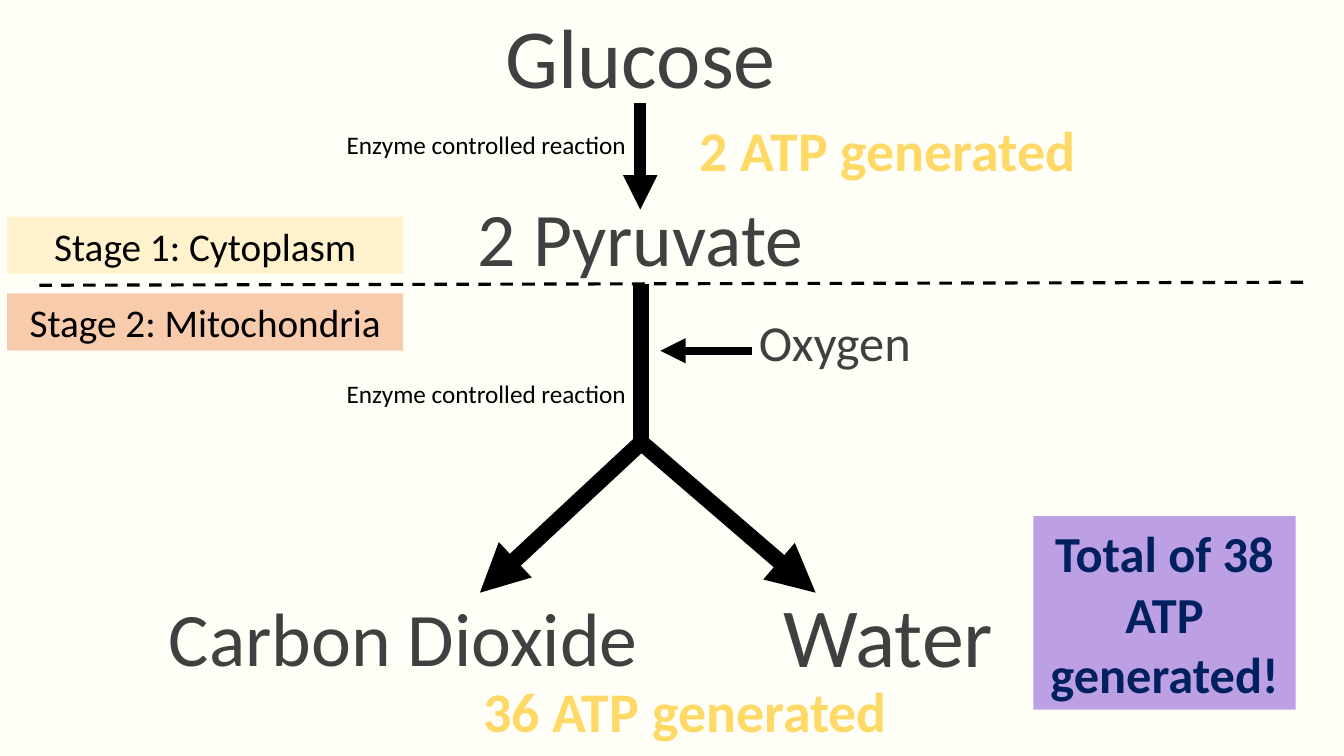
from lxml import etree
from pptx import Presentation
from pptx.dml.color import RGBColor
from pptx.enum.dml import MSO_LINE
from pptx.enum.shapes import MSO_CONNECTOR, MSO_SHAPE
from pptx.enum.text import MSO_ANCHOR, MSO_AUTO_SIZE, PP_ALIGN
from pptx.oxml import parse_xml
from pptx.oxml.ns import nsdecls, qn
from pptx.util import Inches, Pt

STRAIGHT = MSO_CONNECTOR.STRAIGHT
RECT = MSO_SHAPE.RECTANGLE
DASH = MSO_LINE.DASH
MIDDLE = MSO_ANCHOR.MIDDLE
FIT = MSO_AUTO_SIZE.SHAPE_TO_FIT_TEXT
LEFT, CENTER = PP_ALIGN.LEFT, PP_ALIGN.CENTER

FONT = "Calibri"
COLORS = {
    "background": "FFFFF8",
    "molecule": "404040",
    "black": "000000",
    "cytoplasm": "FFF2CC",
    "mitochondria": "F8CBAD",
    "total": "BDA0E4",
    "navy": "002060",
    "gold": "FFC000",
    "yellow": "FFD966",
    "cream": "FFF2CC",
}


def rgb(name):
    return RGBColor.from_string(COLORS[name])


def write(sp, text, size, color, align=CENTER, bold=False, wrap=True):
    tf = sp.text_frame
    tf.word_wrap = wrap
    tf.auto_size = FIT
    p = tf.paragraphs[0]
    p.text = text
    p.alignment = align
    r = p.runs[0]
    r.font.name = FONT
    r.font.size = Pt(size)
    r.font.bold = bold
    r.font.color.rgb = rgb(color)
    return r


def add_label(slide, box, text, size, color, **style):
    sp = slide.shapes.add_textbox(*map(Inches, box))
    return write(sp, text, size, color, **style)


def add_panel(slide, box, text, size, fill, color, bold=False):
    sp = slide.shapes.add_shape(RECT, *map(Inches, box))
    sp.shadow.inherit = False
    sp.fill.solid()
    sp.fill.fore_color.rgb = rgb(fill)
    sp.line.fill.background()
    sp.text_frame.vertical_anchor = MIDDLE
    write(sp, text, size, color, bold=bold)


def add_line(slide, start, end, width, arrow=True, dash=None):
    cx = slide.shapes.add_connector(STRAIGHT, *map(Inches, start + end))
    cx.line.color.rgb = rgb("black")
    cx.line.width = Pt(width)
    if dash:
        cx.line.dash_style = dash
    if arrow:
        ln = cx.line._get_or_add_ln()
        etree.SubElement(ln, qn("a:tailEnd"), type="triangle")
    etree.SubElement(cx._element.spPr, qn("a:effectLst"))


def add_atp_label(slide, left, top, text):
    """Bold yield text with a gold outline and a gold gradient fill."""
    r = add_label(slide, (left, top, 5.21, 0.77), text, 40, "yellow", bold=True)
    rPr = r.font._element
    rPr.remove(rPr.find(qn("a:solidFill")))
    stops = "".join(
        f'<a:gs pos="{pos * 1000}"><a:srgbClr val="{COLORS[name]}"/></a:gs>'
        for pos, name in ((0, "gold"), (4, "yellow"), (87, "cream"))
    )
    outline = (
        f'<a:ln {nsdecls("a")} w="12700"><a:solidFill>'
        f'<a:srgbClr val="{COLORS["gold"]}"/></a:solidFill></a:ln>'
    )
    gradient = (
        f'<a:gradFill {nsdecls("a")}><a:gsLst>{stops}</a:gsLst>'
        f'<a:lin ang="5400000"/></a:gradFill>'
    )
    rPr.insert(0, parse_xml(outline))
    rPr.insert(1, parse_xml(gradient))


def main():
    prs = Presentation()
    prs.slide_width, prs.slide_height = Inches(13.33), Inches(7.5)
    slide = prs.slides.add_slide(prs.slide_layouts[6])
    slide.background.fill.solid()
    slide.background.fill.fore_color.rgb = rgb("background")

    # Molecules
    for box, text, size in (
        ((4.9, 0, 2.91, 1.11), "Glucose", 60),
        ((4.62, 1.84, 3.47, 1.01), "2 Pyruvate", 54),
        ((7.42, 3.04, 1.72, 0.71), "Oxygen", 36),
        ((1.55, 5.81, 4.9, 1.01), "Carbon Dioxide", 54),
        ((7.66, 5.74, 2.3, 1.11), "Water", 60),
    ):
        add_label(slide, box, text, size, "molecule", wrap=False)

    # Reaction arrows: glycolysis, forked pathway, oxygen input
    add_line(slide, (6.35, 1.02), (6.35, 2.08), 8.25)
    fork = (6.36, 4.39)
    for product_x in (4.76, 8.09):
        add_line(slide, fork, (product_x, 5.88), 11.5)
    add_line(slide, (6.36, 2.82), (6.36, 4.49), 11.5, arrow=False)
    add_line(slide, (7.46, 3.48), (6.55, 3.48), 6)

    # Stage boundary and stage names
    add_line(slide, (0.39, 2.83), (12.95, 2.8), 2.25, arrow=False, dash=DASH)
    for top, text, fill in (
        (2.15, "Stage 1: Cytoplasm", "cytoplasm"),
        (2.91, "Stage 2: Mitochondria", "mitochondria"),
    ):
        add_panel(slide, (0.07, top, 3.93, 0.57), text, 28, fill, "black")

    # ATP yields
    add_atp_label(slide, 6.2, 1.1, "2 ATP generated")
    add_atp_label(slide, 4.19, 6.66, "36 ATP generated")

    # Enzyme notes
    for top in (1.23, 3.7):
        add_label(slide, (3.34, top, 3.32, 0.4), "Enzyme controlled reaction",
                  18, "black", align=LEFT)

    # Total
    add_panel(slide, (10.25, 5.12, 2.6, 1.92), "Total of 38 ATP generated!",
              36, "total", "navy", bold=True)

    prs.save("out.pptx")


if __name__ == "__main__":
    main()
